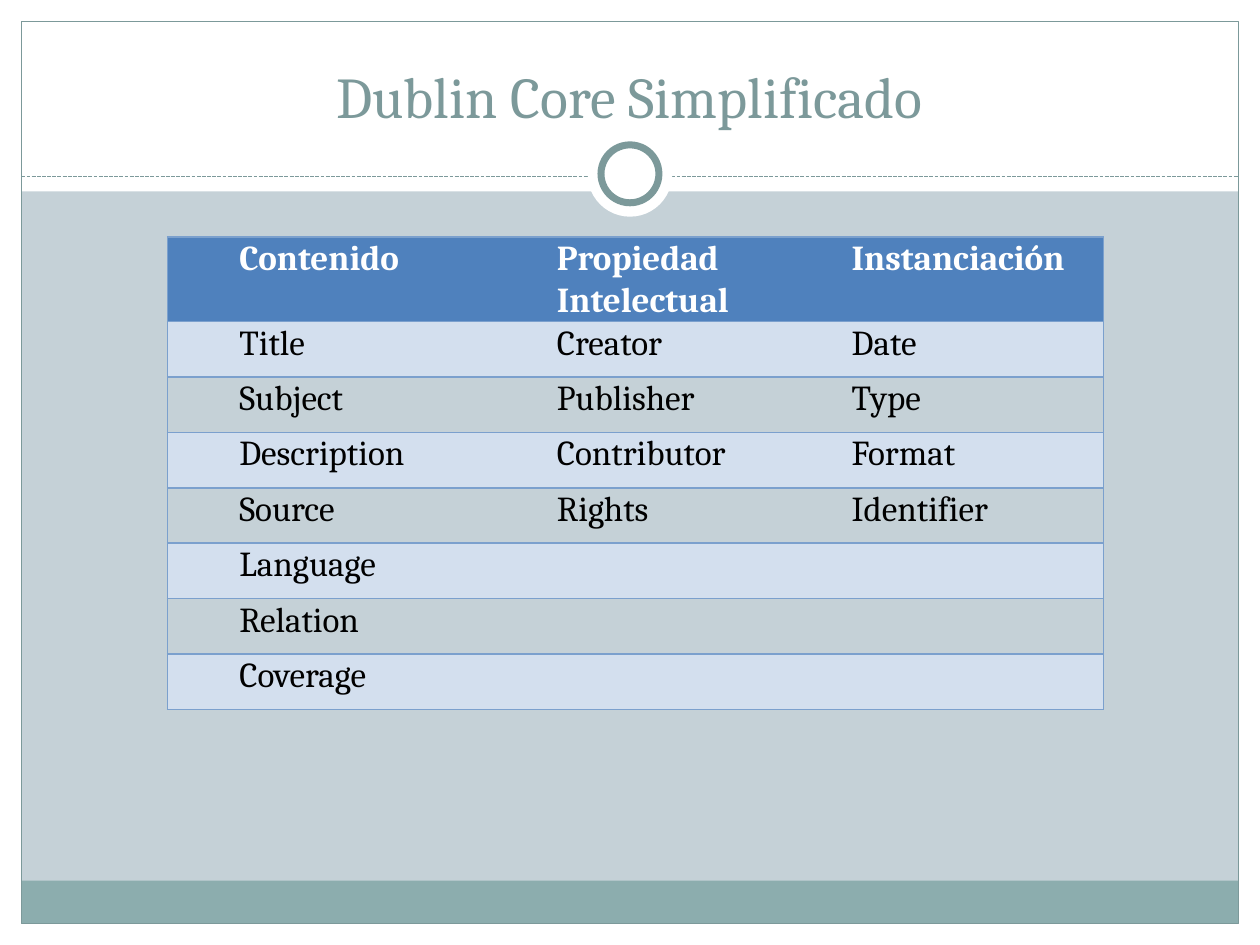
import pptx
import pptx.util
import pptx.dml.color
import pptx.enum.dml
import pptx.enum.shapes
import pptx.enum.text
import pptx.oxml

SHAPE = pptx.enum.shapes.MSO_SHAPE
ALIGN = pptx.enum.text.PP_ALIGN
Pt = pptx.util.Pt

prs = pptx.Presentation()
prs.slide_width = pptx.util.Inches(10)
prs.slide_height = pptx.util.Inches(7.5)
COL, ROW = prs.slide_width / 100, prs.slide_height / 75


def rgb(value):
    return pptx.dml.color.RGBColor.from_string(value)


def grid(x, y, w, h):
    return [round(n * unit) for n, unit in zip((x, y, w, h), (COL, ROW, COL, ROW))]


s = prs.slides.add_slide(prs.slide_layouts[5])
s.background.fill.solid()
s.background.fill.fore_color.rgb = rgb("C5D1D7")

EDGE = 1.7
INNER = 100 - 2 * EDGE
decor = [
    (SHAPE.RECTANGLE, (0, 75 - EDGE, 100, EDGE), "FFFFFF", None),
    (SHAPE.RECTANGLE, (0, 0, 100, 15.2), "FFFFFF", None),
    (SHAPE.RECTANGLE, (0, 0, EDGE, 75), "FFFFFF", None),
    (SHAPE.RECTANGLE, (100 - EDGE, 0, EDGE, 75), "FFFFFF", None),
    (SHAPE.RECTANGLE, (EDGE, 69.9, INNER, 3.4), "8CADAE", None),
    (SHAPE.RECTANGLE, (EDGE, EDGE, INNER, 75 - 2 * EDGE), None, 0.75),
    (SHAPE.OVAL, (46.65, 10.5, 6.7, 6.7), "FFFFFF", None),
    (SHAPE.OVAL, (47.7, 11.5, 4.6, 4.6), "FFFFFF", 4),
]
for kind, box, fill, width in decor:
    if kind == SHAPE.OVAL and width is None:
        rule = s.shapes.add_connector(
            pptx.enum.shapes.MSO_CONNECTOR.STRAIGHT,
            *grid(EDGE, 14, 100 - EDGE, 14))
        rule.line.color.rgb = rgb("7C999A")
        rule.line.width = Pt(0.75)
        rule.line.dash_style = pptx.enum.dml.MSO_LINE.SQUARE_DOT
        rule.element.spPr.append(pptx.oxml.parse_xml(
            '<a:effectLst xmlns:a="http://schemas.openxmlformats.org/drawingml/2006/main"/>'))
    sp = s.shapes.add_shape(kind, *grid(*box))
    sp.shadow.inherit = False
    if fill:
        sp.fill.solid()
        sp.fill.fore_color.rgb = rgb(fill)
    else:
        sp.fill.background()
    if width:
        sp.line.color.rgb = rgb("7C999A")
        sp.line.width = Pt(width)
    else:
        sp.line.fill.background()

title = s.shapes.title
title.left, title.top, title.width, title.height = grid(3.3, 2.5, 93.3, 8.3)
title.element.getparent().append(title.element)
tf = title.text_frame
tf.text = "Dublin Core Simplificado"
tf.vertical_anchor = pptx.enum.text.MSO_ANCHOR.BOTTOM
p = tf.paragraphs[0]
p.alignment = ALIGN.CENTER
for name, value in {"name": "Cambria", "size": Pt(33)}.items():
    setattr(p.runs[0].font, name, value)
p.runs[0].font.color.rgb = rgb("7C999A")

columns = {
    "Contenido": ["Title", "Subject", "Description", "Source",
                  "Language", "Relation", "Coverage"],
    "Propiedad Intelectual": ["Creator", "Publisher", "Contributor", "Rights"],
    "Instanciación": ["Date", "Type", "Format", "Identifier"],
}
widths = [25.2, 23.4, 25.7]
rows = 1 + max(len(terms) for terms in columns.values())
table = s.shapes.add_table(rows, len(columns),
                           *grid(13.3, 18.8, sum(widths), 4.4 * rows)).table
table.first_row = table.horz_banding = False
for row in table.rows:
    row.height = round(4.4 * ROW)

cell_format = {"margin_left": round(0.7 * COL), "margin_right": round(0.7 * COL),
               "margin_top": 0, "margin_bottom": 0}
for j, (heading, terms) in enumerate(columns.items()):
    table.columns[j].width = round(widths[j] * COL)
    texts = [heading] + terms + [""] * (rows - 1 - len(terms))
    for i, text in enumerate(texts):
        cell = table.cell(i, j)
        for name, value in cell_format.items():
            setattr(cell, name, value)
        if i % 2 or i == 0:
            cell.fill.solid()
            cell.fill.fore_color.rgb = rgb("D3DFEE" if i else "4F81BD")
        else:
            cell.fill.background()
        tcPr = cell._tc.get_or_add_tcPr()
        sides = {"L": j == 0, "R": j == len(columns) - 1, "T": True, "B": True}
        for n, (side, drawn) in enumerate(sides.items()):
            paint = ('<a:solidFill><a:srgbClr val="7BA0CD"/></a:solidFill>'
                     if drawn else "<a:noFill/>")
            tcPr.insert(n, pptx.oxml.parse_xml(
                f'<a:ln{side} xmlns:a="http://schemas.openxmlformats.org/drawingml/2006/main"'
                f' w="{Pt(1)}">{paint}</a:ln{side}>'))
        if text:
            p = cell.text_frame.paragraphs[0]
            p.alignment = ALIGN.LEFT if text == "Title" else ALIGN.JUSTIFY
            p.line_spacing = 1.05
            pPr = p._p.get_or_add_pPr()
            pPr.set("marL", str(round(5 * COL)))
            pPr.set("indent", "0")
            r = p.add_run()
            r.text = text
            for name, value in {"name": "Cambria", "size": Pt(20), "bold": i == 0}.items():
                setattr(r.font, name, value)
            r.font.color.rgb = rgb("000000" if i else "FFFFFF")

prs.save("out.pptx")
